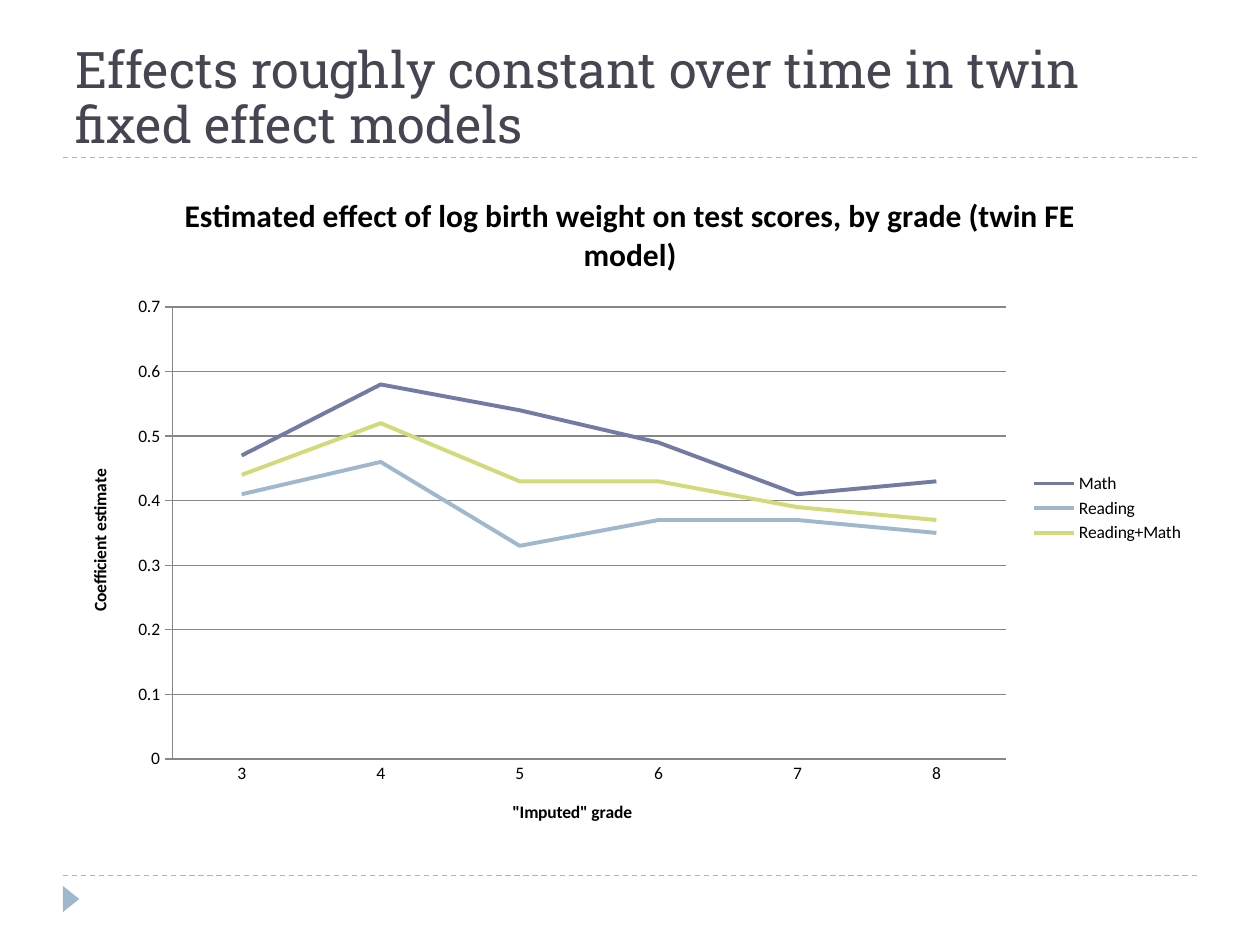
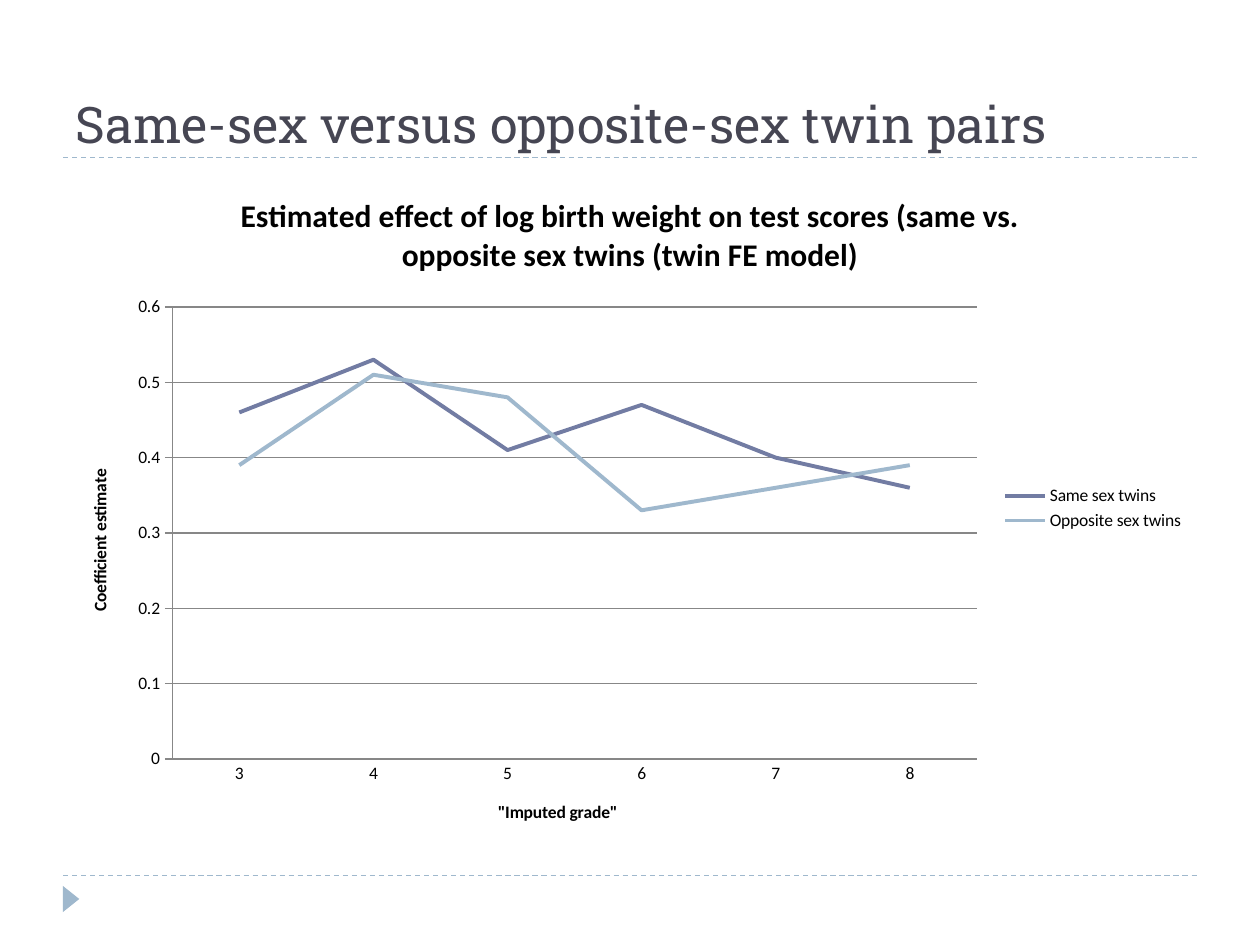
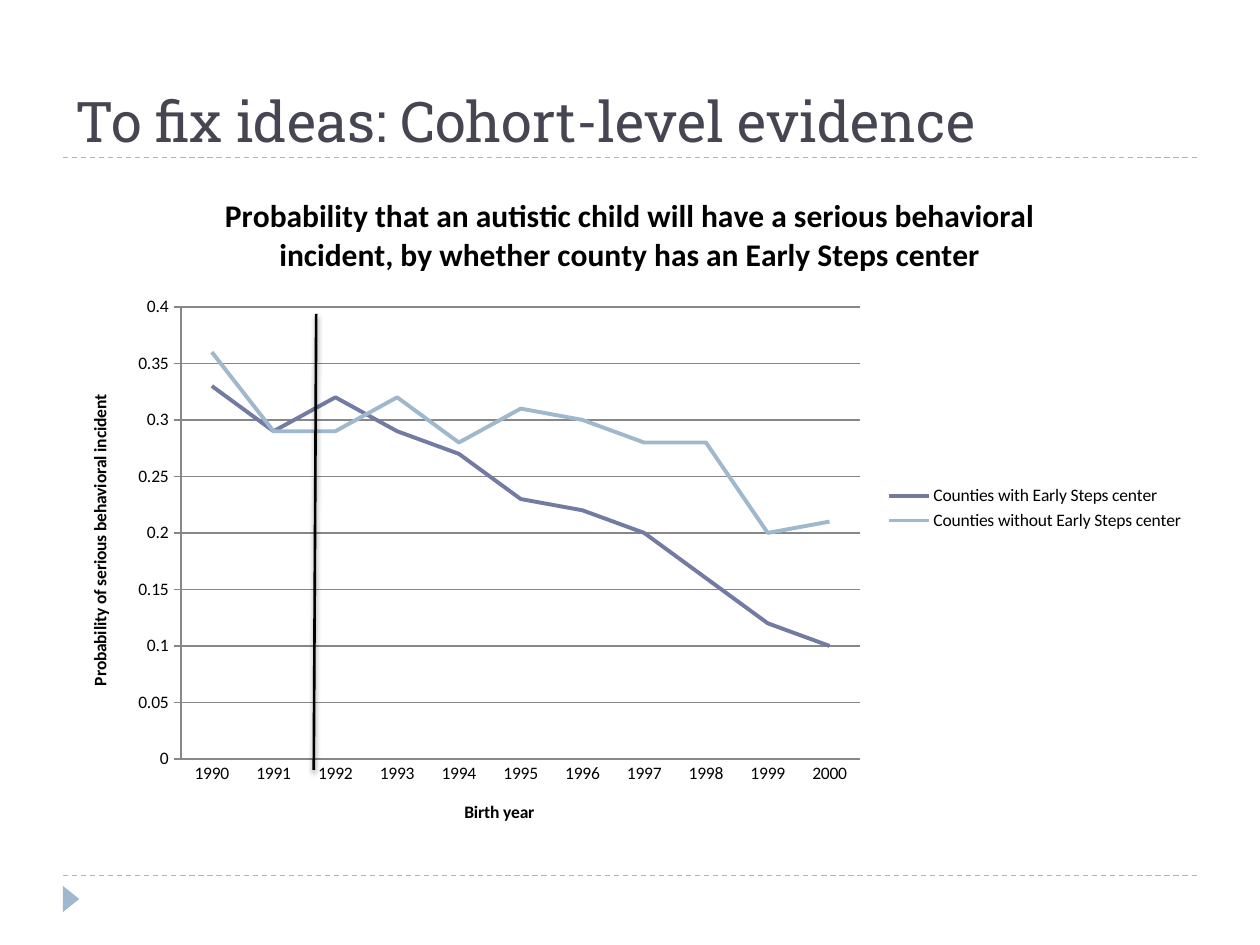
from dataclasses import dataclass

from lxml.etree import SubElement
from pptx import Presentation
from pptx.chart.data import CategoryChartData
from pptx.dml.color import RGBColor
from pptx.enum.chart import XL_CHART_TYPE, XL_LEGEND_POSITION, XL_TICK_MARK
from pptx.enum.dml import MSO_LINE
from pptx.enum.shapes import MSO_CONNECTOR, MSO_SHAPE
from pptx.enum.text import MSO_ANCHOR, PP_ALIGN
from pptx.oxml.ns import qn
from pptx.util import Pt


@dataclass(frozen=True)
class Theme:
    ink: RGBColor = RGBColor.from_string("464653")
    black: RGBColor = RGBColor.from_string("000000")
    grid: RGBColor = RGBColor.from_string("878787")
    rule: RGBColor = RGBColor.from_string("9FB8CD")
    lines: tuple = tuple(map(RGBColor.from_string, ("727CA3", "9FB8CD", "D2DA7A")))
    head: str = "Roboto Slab"
    body: str = "Calibri"
    caption: float = 18
    label: float = 10


theme = Theme()


def add_line(slide, ends, color, width):
    line = slide.shapes.add_connector(MSO_CONNECTOR.STRAIGHT, *map(Pt, ends))
    line.line.color.rgb = color
    line.line.width = Pt(width)
    effects = SubElement(line._element.spPr, qn("a:effectLst"))
    return line, effects


def set_title(part, text, size):
    frame = part.text_frame
    frame.text = text
    font = frame.paragraphs[0].runs[0].font
    font.name, font.size, font.bold = theme.body, Pt(size), True
    font.color.rgb = theme.black


grades = [str(grade) for grade in range(3, 9)]
years = [str(year) for year in range(1990, 2001)]

# Slide title, its size, chart title, axis titles, categories, series
pages = [
    ("Effects roughly constant over time in twin fixed effect models", 28.8,
     "Estimated effect of log birth weight on test scores, by grade (twin FE model)",
     '"Imputed" grade', "Coefficient estimate", grades,
     {"Math": (0.47, 0.58, 0.54, 0.49, 0.41, 0.43),
      "Reading": (0.41, 0.46, 0.33, 0.37, 0.37, 0.35),
      "Reading+Math": (0.44, 0.52, 0.43, 0.43, 0.39, 0.37)}),
    ("Same-sex versus opposite-sex twin pairs", 28.8,
     "Estimated effect of log birth weight on test scores "
     "(same vs. opposite sex twins (twin FE model)",
     '"Imputed grade"', "Coefficient estimate", grades,
     {"Same sex twins": (0.46, 0.53, 0.41, 0.47, 0.4, 0.36),
      "Opposite sex twins": (0.39, 0.51, 0.48, 0.33, 0.36, 0.39)}),
    ("To fix ideas: Cohort-level evidence", 32,
     "Probability that an autistic child will have a serious behavioral incident, "
     "by whether county has an Early Steps center",
     "Birth year", "Probability of serious behavioral incident", years,
     {"Counties with Early Steps center":
          (0.33, 0.29, 0.32, 0.29, 0.27, 0.23, 0.22, 0.2, 0.16, 0.12, 0.1),
      "Counties without Early Steps center":
          (0.36, 0.29, 0.29, 0.32, 0.28, 0.31, 0.3, 0.28, 0.28, 0.2, 0.21)}),
]

deck = Presentation()
deck.slide_width, deck.slide_height = Pt(720), Pt(540)

for heading, size, caption, cat_name, val_name, cats, series in pages:
    slide = deck.slides.add_slide(deck.slide_layouts[5])

    # Dashed rules and corner marker
    for y in (500.4, 90):
        rule, _ = add_line(slide, (36, y, 684, y), theme.rule, 0.75)
        rule.line.dash_style = MSO_LINE.DASH
    marker = slide.shapes.add_shape(
        MSO_SHAPE.ISOSCELES_TRIANGLE, Pt(33.1), Pt(509), Pt(15), Pt(9.4))
    marker.rotation = 90
    marker.shadow.inherit = False
    marker.fill.solid()
    marker.fill.fore_color.rgb = theme.rule
    marker.line.fill.background()

    # Title
    title = slide.shapes.title
    title.left, title.top, title.width, title.height = map(Pt, (36, 12.2, 648, 77.8))
    frame = title.text_frame
    frame.text = heading
    frame.word_wrap = True
    frame.vertical_anchor = MSO_ANCHOR.BOTTOM
    frame.margin_bottom = Pt(1.5)
    para = frame.paragraphs[0]
    para.alignment = PP_ALIGN.LEFT
    para.line_spacing = 0.92
    font = para.runs[0].font
    font.name, font.size = theme.head, Pt(size)
    font.color.rgb = theme.ink

    # Line chart
    data = CategoryChartData()
    data.categories = cats
    for name, vals in series.items():
        data.add_series(name, vals)
    chart = slide.shapes.add_chart(
        XL_CHART_TYPE.LINE, Pt(36), Pt(96), Pt(648), Pt(388.8), data).chart
    chart.font.name, chart.font.size = theme.body, Pt(theme.label)
    chart.font.color.rgb = theme.black
    set_title(chart.chart_title, caption, theme.caption)
    chart.chart_title.include_in_layout = False
    chart.has_legend = True
    chart.legend.position = XL_LEGEND_POSITION.RIGHT
    chart.legend.include_in_layout = False
    plot = chart.plots[0]
    plot.vary_by_categories = False
    for curve, color in zip(plot.series, theme.lines):
        curve.smooth = False
        curve.format.line.color.rgb = color
        curve.format.line.width = Pt(2.25)

    # Axes
    cat_axis, val_axis = chart.category_axis, chart.value_axis
    set_title(cat_axis.axis_title, cat_name, theme.label)
    set_title(val_axis.axis_title, val_name, theme.label)
    cat_axis.major_tick_mark = XL_TICK_MARK.NONE
    val_axis.major_tick_mark = XL_TICK_MARK.OUTSIDE
    val_axis.has_major_gridlines = True
    val_axis.minimum_scale = 0
    for part in (cat_axis, val_axis, val_axis.major_gridlines):
        part.format.line.color.rgb = theme.grid
        part.format.line.width = Pt(0.75)

# Start of the program, marked on the last chart
_, effects = add_line(slide, (179.3, 439.9, 180.7, 179.3), theme.black, 1.5)
shadow = SubElement(effects, qn("a:outerShdw"), blurRad=str(Pt(3)),
                    dist=str(Pt(2)), dir="5400000", rotWithShape="0")
tint = SubElement(shadow, qn("a:srgbClr"), val=str(theme.black))
SubElement(tint, qn("a:alpha"), val="40000")

deck.save("out.pptx")
